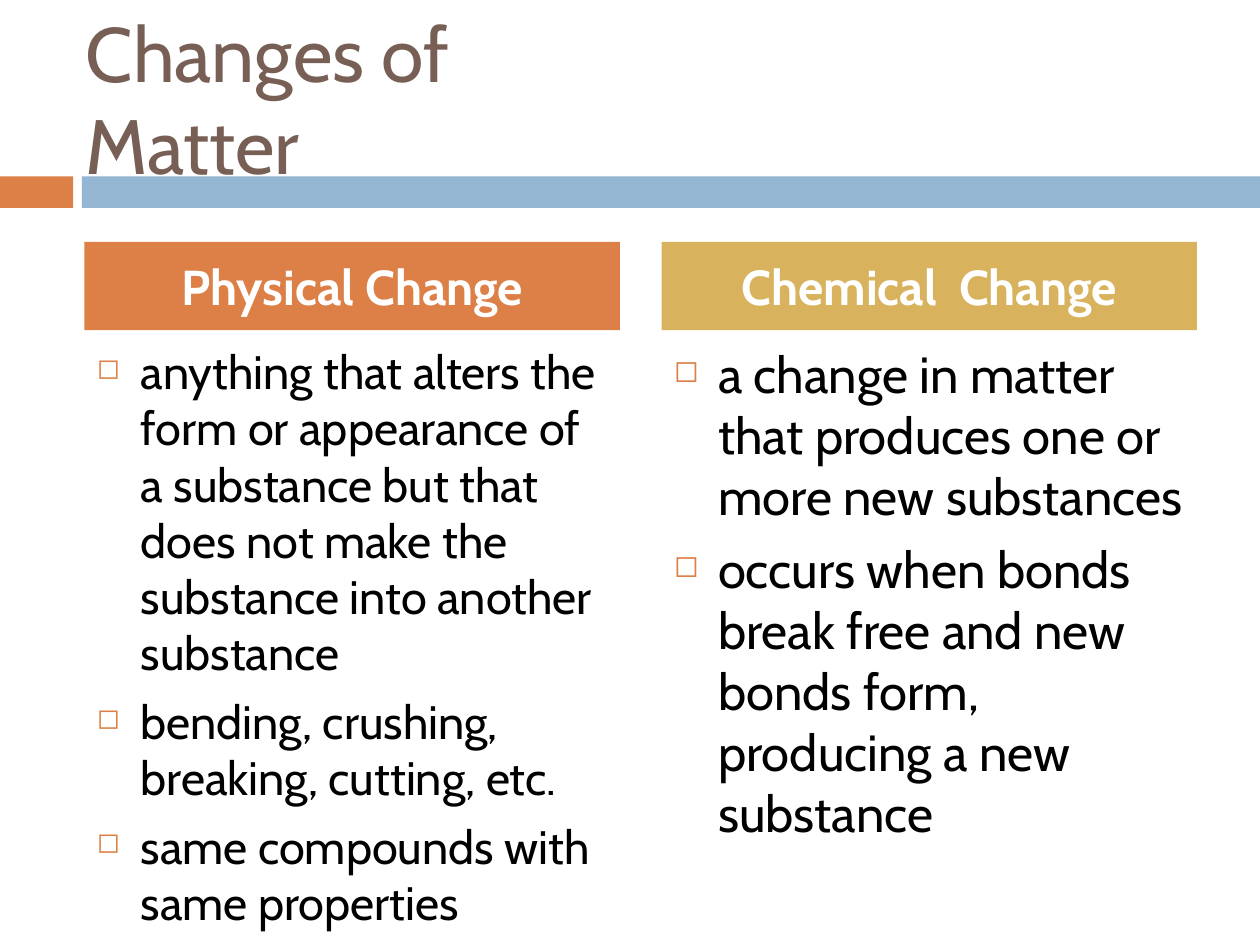
"""Build the slide comparing physical and chemical changes of matter."""
from lxml import etree
from pptx import Presentation
from pptx.dml.color import RGBColor
from pptx.enum.shapes import MSO_SHAPE
from pptx.enum.text import MSO_ANCHOR, MSO_AUTO_SIZE, PP_ALIGN
from pptx.oxml.ns import qn
from pptx.util import Inches, Pt

RECTANGLE = MSO_SHAPE.RECTANGLE
MIDDLE = MSO_ANCHOR.MIDDLE
TOP = MSO_ANCHOR.TOP
NO_FIT = MSO_AUTO_SIZE.NONE
LEFT = PP_ALIGN.LEFT
CENTER = PP_ALIGN.CENTER

FONT = "Cabin"
COLORS = {
    "orange": "DD8047",
    "blue": "94B6D2",
    "gold": "D8B25C",
    "brown": "775F55",
    "black": "000000",
    "white": "FFFFFF",
}
TITLE = "Changes of Matter"
COLUMNS = [
    ("Physical Change", "orange", 26.8, [
        "anything that alters the form or appearance of a substance "
        "but that does not make the substance into another substance",
        "bending, crushing, breaking, cutting, etc.",
        "same compounds with same properties",
    ]),
    ("Chemical  Change", "gold", 29, [
        "a change in matter that produces one or more new substances",
        "occurs when bonds break free and new bonds form, "
        "producing a new substance",
    ]),
]
BARS = [(0, 0.58, "orange"), (0.65, 9.35, "blue")]
BAR_TOP, BAR_HEIGHT = 1.4, 0.25
COLUMN_LEFT, COLUMN_WIDTH, COLUMN_PITCH = 0.67, 4.25, 4.58
HEADING_TOP, HEADING_HEIGHT = 1.92, 0.7
BODY_TOP, BODY_HEIGHT = 2.67, 3.92
INDENT, SPACE_BEFORE, BULLET_PERCENT = 0.35, 7, 60


def color(name):
    return RGBColor.from_string(COLORS[name])


def add_block(slide, left, top, width, height, fill):
    shape = slide.shapes.add_shape(
        RECTANGLE, Inches(left), Inches(top), Inches(width), Inches(height))
    shape.shadow.inherit = False
    shape.fill.solid()
    shape.fill.fore_color.rgb = color(fill)
    shape.line.fill.background()
    return shape


def write(shape, lines, size, text_color, align, anchor, space=0, bold=False):
    frame = shape.text_frame
    frame.text = "\n".join(lines)
    frame.word_wrap = True
    frame.auto_size = NO_FIT
    frame.vertical_anchor = anchor
    for paragraph in frame.paragraphs:
        paragraph.alignment = align
        paragraph.space_before = Pt(space)
        font = paragraph.font
        font.name, font.size, font.bold = FONT, Pt(size), bold
        font.color.rgb = color(text_color)
    return frame.paragraphs


def add_bullet(paragraph):
    properties = paragraph._p.get_or_add_pPr()
    properties.set("marL", str(Inches(INDENT)))
    properties.set("indent", str(-Inches(INDENT)))
    bullet_parts = [
        etree.Element(qn("a:buClr")),
        etree.Element(qn("a:buSzPct"), val=str(BULLET_PERCENT * 1000)),
        etree.Element(qn("a:buChar"), char="◻"),
    ]
    etree.SubElement(bullet_parts[0], qn("a:srgbClr"), val=COLORS["orange"])
    default_run = properties.find(qn("a:defRPr"))
    for part in bullet_parts:
        default_run.addprevious(part)


def add_column(slide, left, heading, fill, size, points):
    body = slide.shapes.add_textbox(
        Inches(left), Inches(BODY_TOP), Inches(COLUMN_WIDTH), Inches(BODY_HEIGHT))
    for paragraph in write(body, points, size, "black", LEFT, TOP, SPACE_BEFORE):
        add_bullet(paragraph)
    block = add_block(slide, left, HEADING_TOP, COLUMN_WIDTH, HEADING_HEIGHT, fill)
    write(block, [heading], 28, "white", CENTER, MIDDLE, SPACE_BEFORE, bold=True)


def main():
    presentation = Presentation()
    presentation.slide_width, presentation.slide_height = Inches(10), Inches(7.5)
    slide = presentation.slides.add_slide(presentation.slide_layouts[5])
    title = slide.shapes.title
    for left, width, fill in BARS:
        add_block(slide, left, BAR_TOP, width, BAR_HEIGHT, fill)
    slide.shapes._spTree.append(title._element)
    title.left, title.top = Inches(0.58), Inches(0.3)
    title.width, title.height = Inches(4.92), Inches(0.95)
    write(title, [TITLE], 44, "brown", LEFT, MIDDLE)
    for index, column in enumerate(COLUMNS):
        add_column(slide, COLUMN_LEFT + index * COLUMN_PITCH, *column)
    presentation.save("out.pptx")


if __name__ == "__main__":
    main()
